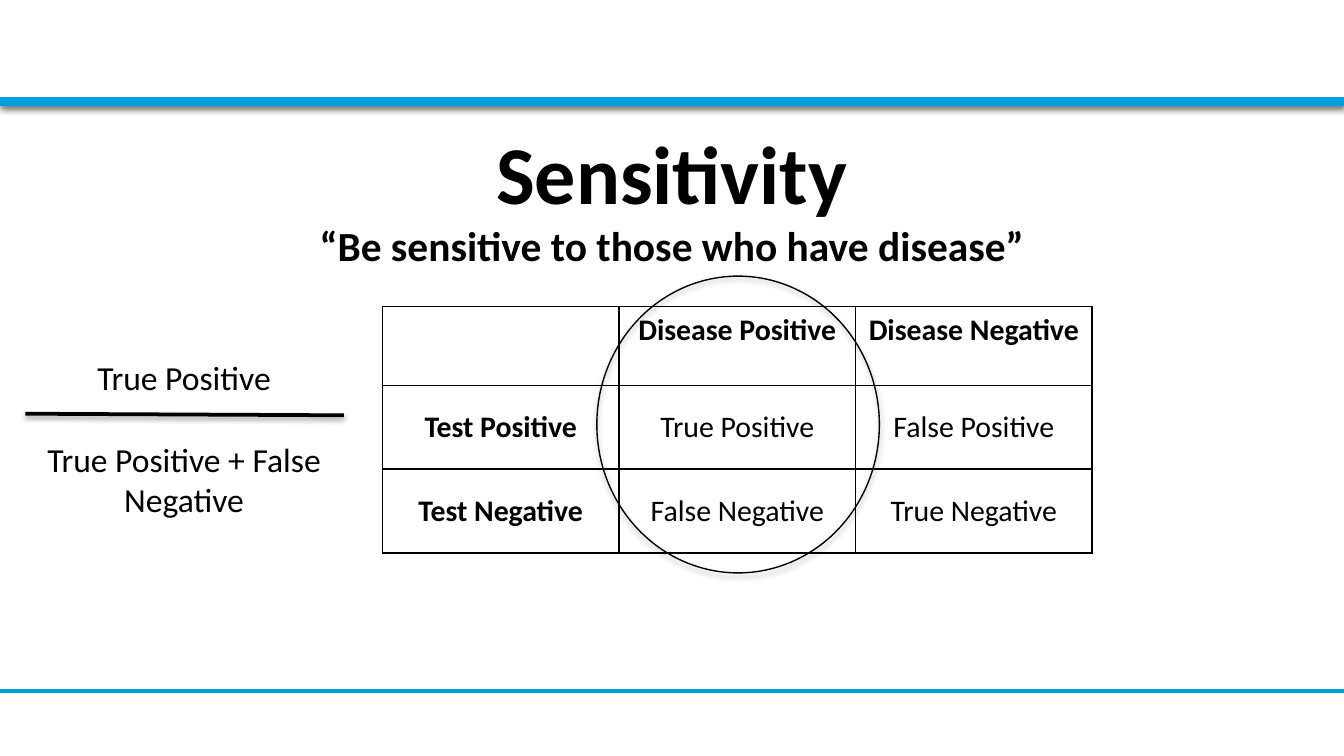
from dataclasses import dataclass

from lxml.etree import SubElement
from pptx import Presentation
from pptx.dml.color import RGBColor
from pptx.enum.shapes import MSO_CONNECTOR, MSO_SHAPE
from pptx.enum.text import MSO_ANCHOR, PP_ALIGN
from pptx.oxml.ns import qn
from pptx.util import Cm, Pt


@dataclass(frozen=True)
class Theme:
    font: str = "Calibri"
    ink: RGBColor = RGBColor(0, 0, 0)
    paper: RGBColor = RGBColor(255, 255, 255)
    blue: RGBColor = RGBColor(0x00, 0xA0, 0xDF)
    title: float = 44
    motto: float = 22.2
    body: float = 18
    cell: float = 16


THEME = Theme()
WIDTH = 25.4
GRID = [
    ["", "Disease Positive", "Disease Negative"],
    ["Test Positive", "True Positive", "False Positive"],
    ["Test Negative", "False Negative", "True Negative"],
]


def box(left, top, width, height):
    return Cm(left), Cm(top), Cm(width), Cm(height)


def style(par, size, bold=False):
    par.alignment = PP_ALIGN.CENTER
    font = par.font
    font.name, font.size, font.bold = THEME.font, Pt(size), bold
    font.color.rgb = THEME.ink


def shade(shape, dist=None, alpha=35):
    """Set a soft shadow below the shape, or none when dist is None."""
    props = shape._element.spPr
    effects = SubElement(props, qn("a:effectLst"))
    if dist is None:
        return
    outer = SubElement(effects, qn("a:outerShdw"), blurRad=str(Pt(3.1)),
                       dist=str(Pt(dist)), dir="5400000", rotWithShape="0")
    color = SubElement(outer, qn("a:srgbClr"), val=str(THEME.ink))
    SubElement(color, qn("a:alpha"), val=str(alpha * 1000))


def add_rule(slide, start, end, color, weight, dist=None):
    rule = slide.shapes.add_connector(
        MSO_CONNECTOR.STRAIGHT, *(Cm(n) for n in start + end))
    rule.line.color.rgb = color
    rule.line.width = Pt(weight)
    shade(rule, dist, alpha=38)


def add_band(slide):
    band = slide.shapes.add_shape(MSO_SHAPE.RECTANGLE, *box(0, 0, WIDTH, 1.96))
    band.fill.solid()
    band.fill.fore_color.rgb = THEME.paper
    band.line.fill.background()
    shade(band, 1.8)


def add_ring(slide):
    ring = slide.shapes.add_shape(MSO_SHAPE.OVAL, *box(11.28, 5.22, 5.34, 5.61))
    ring.fill.background()
    ring.line.color.rgb = THEME.ink
    ring.line.width = Pt(0.75)
    shade(ring, 1.8)


def set_title(slide):
    title = slide.shapes.title
    title.left, title.top, title.width, title.height = box(1.27, 1.65, 22.86, 4.11)
    frame = title.text_frame
    frame.vertical_anchor = MSO_ANCHOR.MIDDLE
    par = frame.paragraphs[0]
    par.text = "Sensitivity\v“Be sensitive to those who have disease”"
    style(par, THEME.title, bold=True)
    par.runs[1].font.size = Pt(THEME.motto)


def add_ratio(slide):
    frame = slide.shapes.add_textbox(*box(0.48, 6.63, 6, 3.33)).text_frame
    frame.word_wrap = True
    frame.text = "True Positive\nTrue Positive + False Negative"
    for par in frame.paragraphs:
        style(par, THEME.body)
    par.space_before = Pt(22)
    add_rule(slide, (0.48, 7.82), (6.5, 7.85), THEME.ink, 2, dist=1.6)


def add_borders(cell):
    props = cell._tc.get_or_add_tcPr()
    for index, side in enumerate(("lnL", "lnR", "lnT", "lnB")):
        line = props.makeelement(qn(f"a:{side}"), {"w": str(Pt(1))})
        fill = SubElement(line, qn("a:solidFill"))
        SubElement(fill, qn("a:srgbClr"), val=str(THEME.ink))
        props.insert(index, line)


def add_grid(slide):
    table = slide.shapes.add_table(3, 3, *box(7.23, 5.79, 13.41, 4.66)).table
    table.first_row = table.horz_banding = False
    for row, height in zip(table.rows, (1.5, 1.58, 1.58)):
        row.height = Cm(height)
    for r, words in enumerate(GRID):
        for c, text in enumerate(words):
            cell = table.cell(r, c)
            cell.fill.background()
            cell.margin_left = cell.margin_right = Cm(0.2)
            cell.margin_top = cell.margin_bottom = Cm(0.1)
            cell.vertical_anchor = MSO_ANCHOR.MIDDLE if r else MSO_ANCHOR.TOP
            cell.text = text
            style(cell.text_frame.paragraphs[0], THEME.cell, bold=r == 0 or c == 0)
            add_borders(cell)


def main():
    deck = Presentation()
    deck.slide_width, deck.slide_height = Cm(WIDTH), Cm(14.29)
    slide = deck.slides.add_slide(deck.slide_layouts[5])
    add_band(slide)
    add_rule(slide, (0, 13.06), (WIDTH, 13.06), THEME.blue, 2)
    add_rule(slide, (0, 1.92), (WIDTH, 1.92), THEME.blue, 4.5, dist=1.6)
    set_title(slide)
    add_grid(slide)
    add_ring(slide)
    add_ratio(slide)
    deck.save("out.pptx")


if __name__ == "__main__":
    main()
